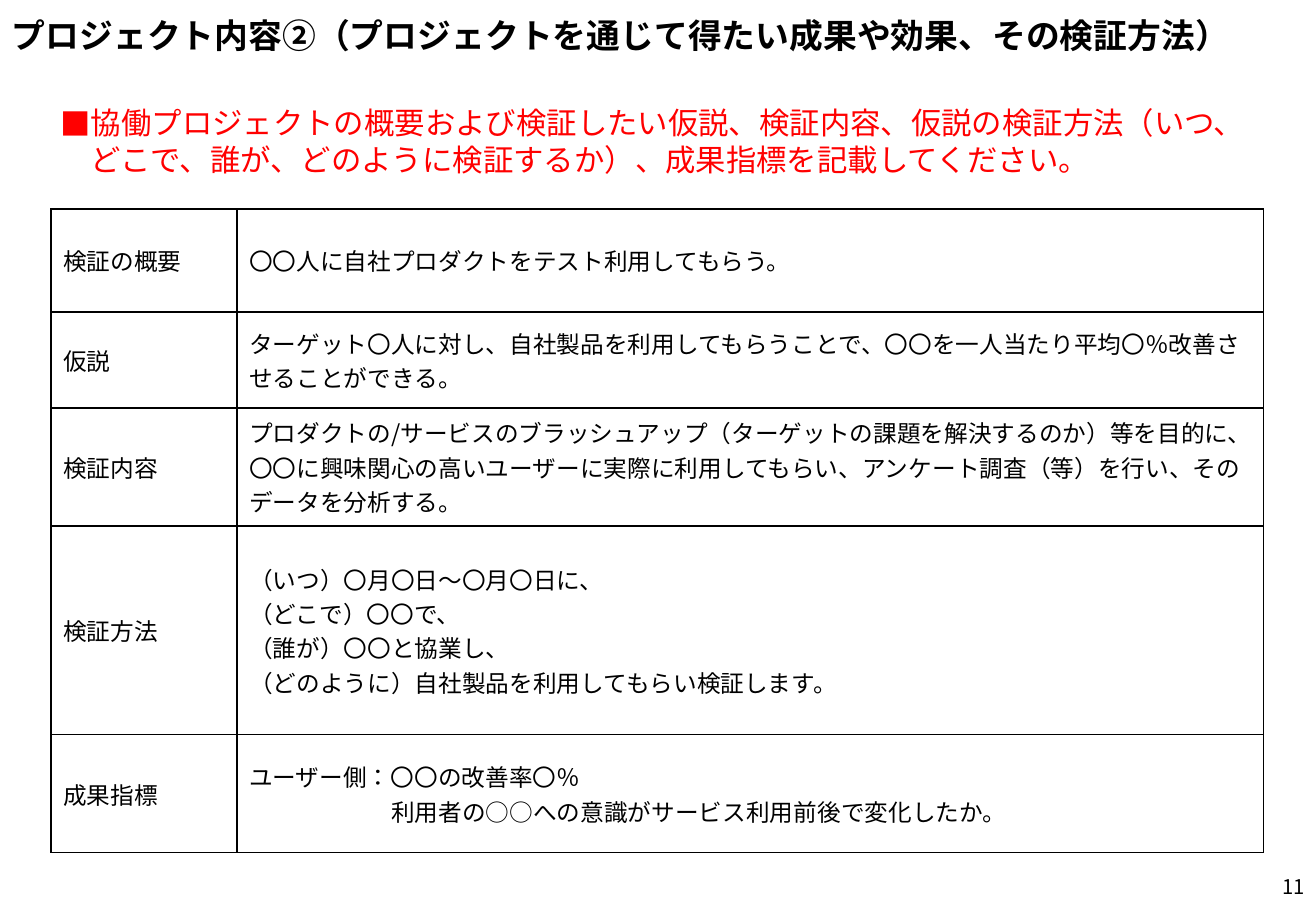
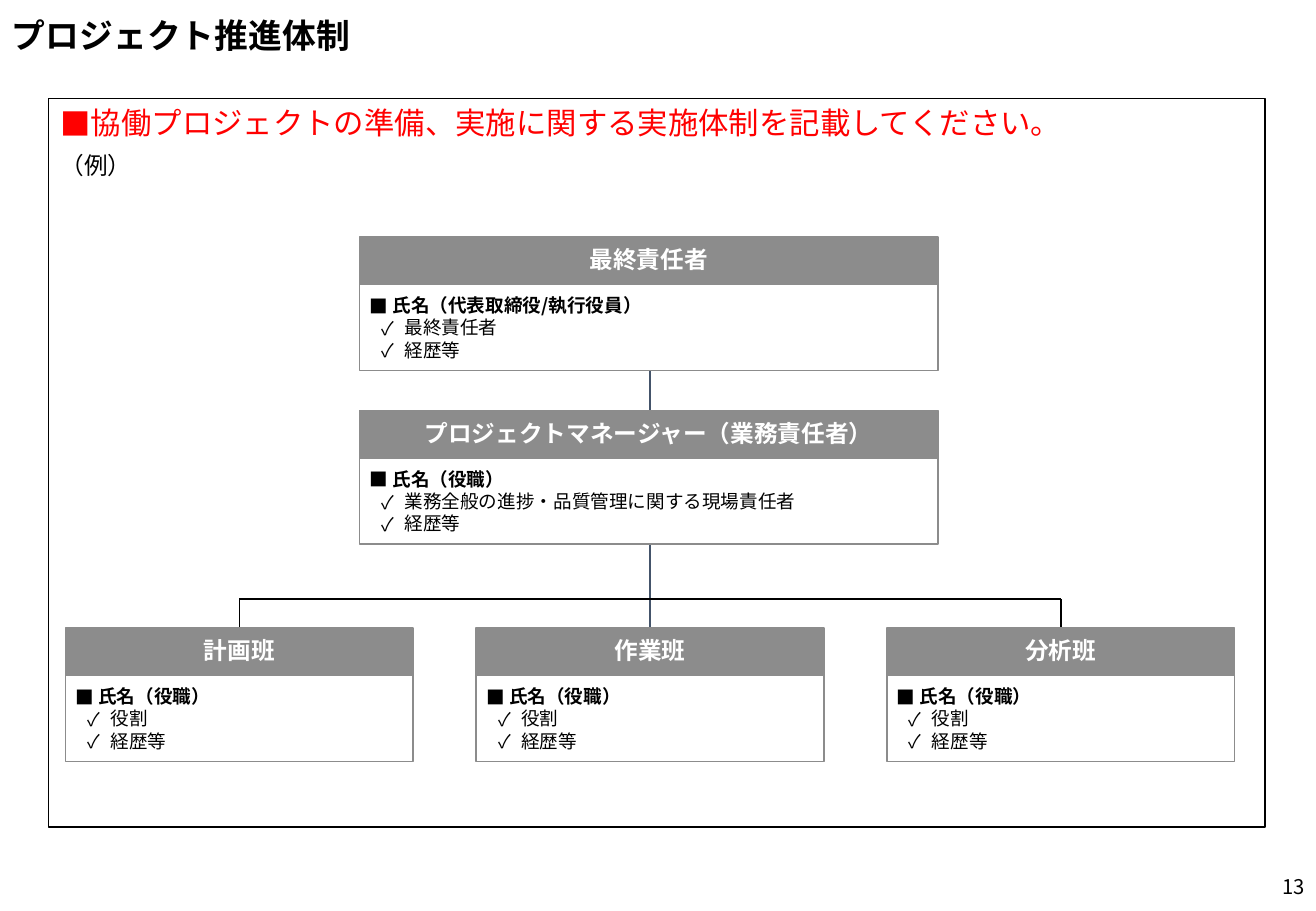
from dataclasses import dataclass
from typing import Optional

from lxml import etree
from pptx import Presentation
from pptx import util as u
from pptx.dml.color import RGBColor
from pptx.enum import lang, shapes, text
from pptx.oxml.ns import qn

SCALE = 9144
SLIDE_WIDTH, SLIDE_HEIGHT = 1083, 750
FONT = "Noto Sans CJK JP"
BLACK = RGBColor(0x00, 0x00, 0x00)
WHITE = RGBColor(0xFF, 0xFF, 0xFF)
RED = RGBColor(0xFF, 0x00, 0x00)
GRAY = RGBColor(0x8C, 0x8C, 0x8C)
SLATE = RGBColor(0x44, 0x54, 0x6A)

SQUARE, CHECK = "■", "✓"
HEADER_HEIGHT, DETAIL_HEIGHT = 39, 71
CARD_HEIGHT = HEADER_HEIGHT + DETAIL_HEIGHT


def px(length: int) -> u.Emu:
    return u.Emu(length * SCALE)


@dataclass(frozen=True)
class Box:
    left: int
    top: int
    width: int
    height: int

    def emu(self) -> tuple:
        return tuple(px(v) for v in (self.left, self.top, self.width, self.height))


@dataclass(frozen=True)
class Line:
    text: str
    size: int = 14
    color: RGBColor = BLACK
    bold: bool = False
    align: text.PP_ALIGN = text.PP_ALIGN.LEFT
    spacing: Optional[float] = None
    before: int = 0
    bullet: str = ""
    margin: int = 0
    hanging: int = 0


@dataclass(frozen=True)
class Card:
    left: int
    top: int
    width: int
    heading: str
    name: str
    duties: tuple


@dataclass(frozen=True)
class Row:
    height: int
    label: str
    lines: tuple


BODY = Box(40, 81, 1001, 600)
TEAM_TOP, TEAM_WIDTH, TEAM_STEP = 517, 286, 338
LEAD_LEFT, LEAD_WIDTH = 296, 476
CENTER = 535
BUS_TOP = 493

LEADS = (
    Card(LEAD_LEFT, 195, LEAD_WIDTH, "最終責任者", "氏名（代表取締役/執行役員）",
         ("最終責任者", "経歴等")),
    Card(LEAD_LEFT, 338, LEAD_WIDTH, "プロジェクトマネージャー（業務責任者）", "氏名（役職）",
         ("業務全般の進捗・品質管理に関する現場責任者", "経歴等")),
)
TEAMS = tuple(
    Card(54 + TEAM_STEP * i, TEAM_TOP, TEAM_WIDTH, heading, "氏名（役職）", ("役割", "経歴等"))
    for i, heading in enumerate(("計画班", "作業班", "分析班"))
)

ROWS = (
    Row(85, "検証の概要", (Line("〇〇人に自社プロダクトをテスト利用してもらう。"),)),
    Row(79, "仮説", (Line(
        "ターゲット〇人に対し、自社製品を利用してもらうことで、"
        "〇〇を一人当たり平均〇％改善させることができる。"),)),
    Row(97, "検証内容", (Line(
        "プロダクトの/サービスのブラッシュアップ（ターゲットの課題を解決するのか）等を目的に、"
        "〇〇に興味関心の高いユーザーに実際に利用してもらい、"
        "アンケート調査（等）を行い、そのデータを分析する。"),)),
    Row(172, "検証方法", (
        Line("（いつ）〇月〇日～〇月〇日に、"),
        Line("（どこで）〇〇で、"),
        Line("（誰が）〇〇と協業し、"),
        Line("（どのように）自社製品を利用してもらい検証します。"),
    )),
    Row(97, "成果指標", (
        Line("ユーザー側：〇〇の改善率〇％"),
        Line("利用者の○○への意識がサービス利用前後で変化したか。", margin=117),
    )),
)


def write(frame, lines: tuple, anchor=text.MSO_ANCHOR.TOP) -> None:
    frame.vertical_anchor = anchor
    for i, line in enumerate(lines):
        paragraph = frame.add_paragraph() if i else frame.paragraphs[0]
        paragraph.text = line.text
        paragraph.alignment = line.align
        paragraph.line_spacing = line.spacing
        paragraph.space_before = u.Pt(line.before)
        font = paragraph.font
        font.name, font.size, font.bold = FONT, u.Pt(line.size), line.bold
        font.color.rgb = line.color
        font.language_id = lang.MSO_LANGUAGE_ID.JAPANESE
        properties = paragraph._p.get_or_add_pPr()
        properties.set("marL", str(px(line.margin)))
        properties.set("indent", str(px(-line.hanging)))
        defaults = properties.find(qn("a:defRPr"))
        defaults.find(qn("a:latin")).addnext(
            etree.Element(qn("a:ea"), typeface=FONT))
        if line.bullet:
            defaults.addprevious(etree.Element(qn("a:buFont"), typeface=FONT))
            defaults.addprevious(etree.Element(qn("a:buChar"), char=line.bullet))


def add_text(slide, box: Box, *lines: Line, anchor=text.MSO_ANCHOR.TOP):
    shape = slide.shapes.add_textbox(*box.emu())
    shape.text_frame.word_wrap = True
    write(shape.text_frame, lines, anchor)
    return shape


def add_panel(slide, box: Box, fill: RGBColor, lines: tuple, anchor, wrap: bool) -> None:
    shape = slide.shapes.add_shape(shapes.MSO_SHAPE.RECTANGLE, *box.emu())
    shape.shadow.inherit = False
    shape.fill.solid()
    shape.fill.fore_color.rgb = fill
    shape.line.color.rgb = GRAY
    shape.line.width = u.Pt(1)
    frame = shape.text_frame
    frame.word_wrap = wrap
    frame.margin_left = frame.margin_right = frame.margin_top = frame.margin_bottom = px(8)
    write(frame, lines, anchor)


def add_card(slide, card: Card) -> None:
    header = Box(card.left, card.top, card.width, HEADER_HEIGHT)
    detail = Box(card.left, card.top + HEADER_HEIGHT, card.width, DETAIL_HEIGHT)
    name = Line(card.name, 11, bold=True, bullet=SQUARE, margin=19, hanging=19)
    duties = tuple(
        Line(duty, 11, bullet=CHECK, margin=29, hanging=19) for duty in card.duties
    )
    add_panel(slide, detail, WHITE, (name, *duties), text.MSO_ANCHOR.TOP, True)
    heading = Line(card.heading, 14, WHITE, True, text.PP_ALIGN.CENTER, 0.95)
    add_panel(slide, header, GRAY, (heading,), text.MSO_ANCHOR.MIDDLE, False)


def add_link(slide, start: tuple, end: tuple, color: RGBColor) -> None:
    connector = slide.shapes.add_connector(
        shapes.MSO_CONNECTOR.STRAIGHT, *(px(v) for v in (*start, *end)))
    connector.line.color.rgb = color
    connector.line.width = u.Pt(1)
    etree.SubElement(connector._element.spPr, qn("a:effectLst"))


def add_page(presentation, title: str, number: int):
    slide = presentation.slides.add_slide(presentation.slide_layouts[6])
    add_text(slide, Box(0, 0, SLIDE_WIDTH, 61), Line(title, 20, bold=True, spacing=0.9),
             anchor=text.MSO_ANCHOR.MIDDLE)
    add_text(slide, Box(840, 710, 244, 40), Line(str(number), 12, align=text.PP_ALIGN.RIGHT),
             anchor=text.MSO_ANCHOR.MIDDLE)
    return slide


def instruction(wording: str) -> Line:
    return Line(wording, 18, RED, before=6, bullet=SQUARE, margin=25, hanging=25)


def add_border(cell) -> None:
    properties = cell._tc.get_or_add_tcPr()
    for i, side in enumerate(("lnL", "lnR", "lnT", "lnB")):
        border = etree.Element(qn(f"a:{side}"), w=str(u.Pt(1)))
        fill = etree.SubElement(border, qn("a:solidFill"))
        etree.SubElement(fill, qn("a:srgbClr"), val=str(BLACK))
        properties.insert(i, border)


def add_plan_table(slide) -> None:
    box = Box(42, 172, 998, sum(row.height for row in ROWS))
    table = slide.shapes.add_table(len(ROWS), 2, *box.emu()).table
    table.first_row = table.horz_banding = False
    for column, width in zip(table.columns, (153, 845)):
        column.width = px(width)
    for i, row in enumerate(ROWS):
        table.rows[i].height = px(row.height)
        for j, lines in enumerate(((Line(row.label),), row.lines)):
            cell = table.cell(i, j)
            cell.fill.background()
            add_border(cell)
            write(cell.text_frame, lines)
            cell.vertical_anchor = text.MSO_ANCHOR.MIDDLE


def add_plan_slide(presentation) -> None:
    slide = add_page(presentation, "プロジェクト内容②（プロジェクトを通じて得たい成果や効果、その検証方法）", 11)
    add_text(slide, Box(BODY.left, BODY.top, BODY.width, 85), instruction(
        "協働プロジェクトの概要および検証したい仮説、検証内容、仮説の検証方法"
        "（いつ、どこで、誰が、どのように検証するか）、成果指標を記載してください。"))
    add_plan_table(slide)


def add_team_slide(presentation) -> None:
    slide = add_page(presentation, "プロジェクト推進体制", 13)
    body = add_text(
        slide, BODY,
        instruction("協働プロジェクトの準備、実施に関する実施体制を記載してください。"),
        Line("（例）", before=6))
    body.line.color.rgb = BLACK
    body.line.width = u.Pt(0.75)
    add_link(slide, (CENTER, LEADS[0].top + CARD_HEIGHT), (CENTER, TEAM_TOP), SLATE)
    ends = (CENTER - TEAM_STEP, CENTER + TEAM_STEP)
    add_link(slide, (ends[0], BUS_TOP), (ends[1], BUS_TOP), BLACK)
    for end in ends:
        add_link(slide, (end, BUS_TOP), (end, TEAM_TOP), BLACK)
    for card in LEADS + TEAMS:
        add_card(slide, card)


def main() -> None:
    presentation = Presentation()
    presentation.slide_width, presentation.slide_height = px(SLIDE_WIDTH), px(SLIDE_HEIGHT)
    add_plan_slide(presentation)
    add_team_slide(presentation)
    presentation.save("out.pptx")


if __name__ == "__main__":
    main()
